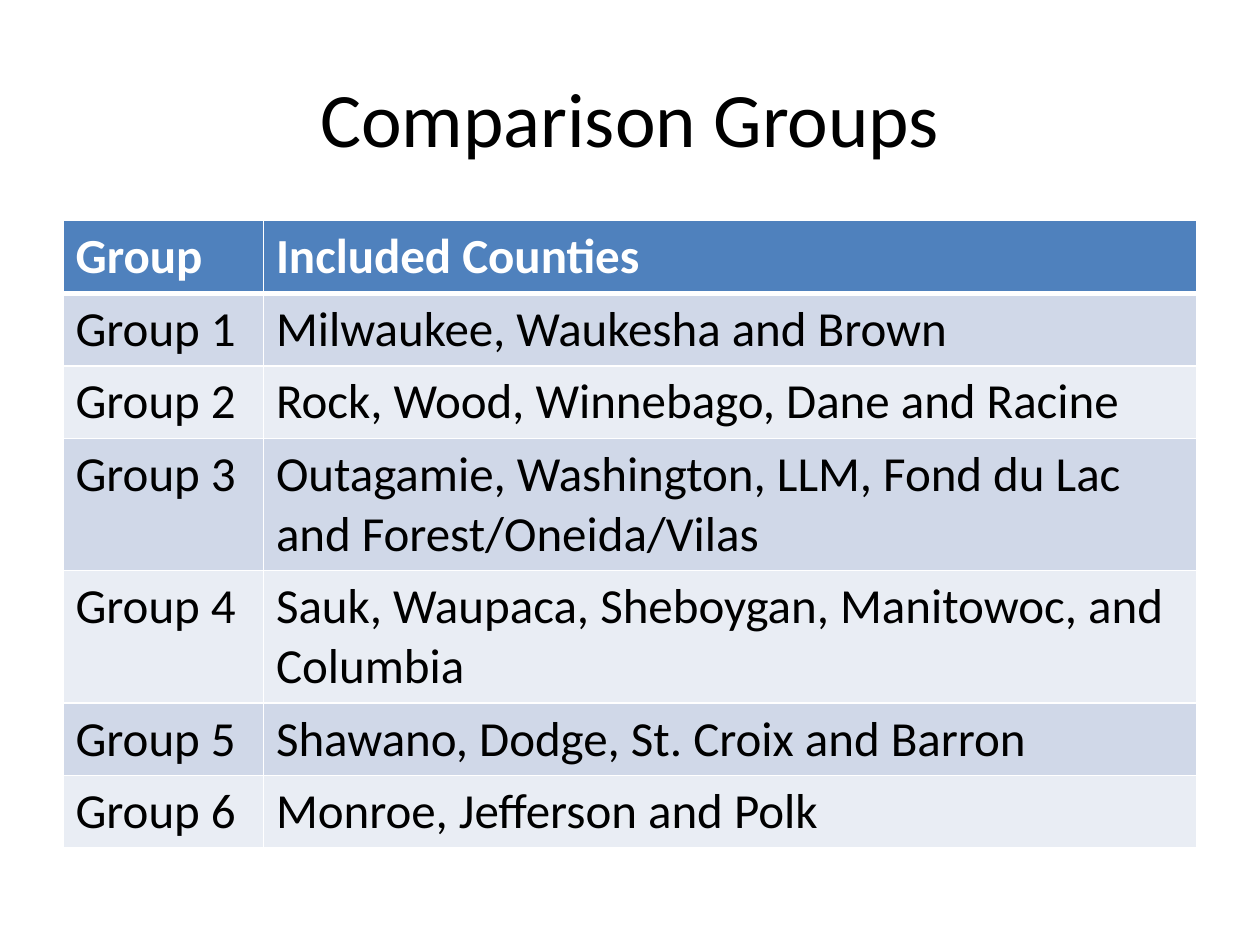
import pptx
import pptx.dml.color
import pptx.enum.text
import pptx.oxml.ns
import pptx.util
from lxml import etree

RGBColor = pptx.dml.color.RGBColor
Cm = pptx.util.Cm
Pt = pptx.util.Pt
qn = pptx.oxml.ns.qn

BLACK = RGBColor(0x00, 0x00, 0x00)
WHITE = RGBColor(0xFF, 0xFF, 0xFF)
HEADER_BLUE = RGBColor(0x4F, 0x81, 0xBD)
BAND_DARK = RGBColor(0xD0, 0xD8, 0xE8)
BAND_LIGHT = RGBColor(0xE9, 0xED, 0xF4)

HEADINGS = ("Group", "Included Counties")
COUNTIES = (
    "Milwaukee, Waukesha and Brown",
    "Rock, Wood, Winnebago, Dane and Racine",
    "Outagamie, Washington, LLM, Fond du Lac and Forest/Oneida/Vilas",
    "Sauk, Waupaca, Sheboygan, Manitowoc, and Columbia",
    "Shawano, Dodge, St. Croix and Barron",
    "Monroe, Jefferson and Polk",
)


class GroupSlide:
    font_name = "Calibri"
    margin = Cm(1.27)
    content_width = Cm(22.86)

    def __init__(self, presentation):
        self.slide = presentation.slides.add_slide(presentation.slide_layouts[5])

    def format_text(self, paragraph, size, color, bold=False):
        font = paragraph.runs[0].font
        values = {"name": self.font_name, "size": Pt(size), "bold": bold}
        for attribute, value in values.items():
            setattr(font, attribute, value)
        font.color.rgb = color

    def add_title(self, text):
        title = self.slide.shapes.title
        place = {"left": self.margin, "top": Cm(0.76),
                 "width": self.content_width, "height": Cm(3.18)}
        for attribute, value in place.items():
            setattr(title, attribute, value)
        title.text_frame.text = text
        title.text_frame.vertical_anchor = pptx.enum.text.MSO_ANCHOR.MIDDLE
        heading = title.text_frame.paragraphs[0]
        heading.alignment = pptx.enum.text.PP_ALIGN.CENTER
        self.format_text(heading, 44, BLACK)

    def add_border(self, cell, side, width):
        """Draw a white line on one side: L, R, T or B."""
        line = etree.SubElement(cell._tc.get_or_add_tcPr(), qn(f"a:ln{side}"),
                                w=str(Pt(width)))
        fill = etree.SubElement(line, qn("a:solidFill"))
        etree.SubElement(fill, qn("a:srgbClr"), val=str(WHITE))

    def add_table(self, rows, column_widths, row_height):
        table = self.slide.shapes.add_table(
            len(rows), len(column_widths), self.margin, Cm(4.45),
            self.content_width, row_height * len(rows)).table
        for column, width in zip(table.columns, column_widths):
            column.width = width
        for row_index, texts in enumerate(rows):
            table.rows[row_index].height = row_height
            is_header = row_index == 0
            band = BAND_DARK if row_index % 2 else BAND_LIGHT
            widths = {"L": 1, "R": 1, "T": 3 if row_index == 1 else 1,
                      "B": 3 if is_header else 1}
            for column_index, text in enumerate(texts):
                cell = table.cell(row_index, column_index)
                for side, width in widths.items():
                    self.add_border(cell, side, width)
                cell.fill.solid()
                cell.fill.fore_color.rgb = HEADER_BLUE if is_header else band
                cell.text = text
                self.format_text(cell.text_frame.paragraphs[0], 28,
                                 WHITE if is_header else BLACK, is_header)


def main():
    presentation = pptx.Presentation()
    presentation.slide_width = Cm(25.4)
    presentation.slide_height = Cm(19.05)
    groups = GroupSlide(presentation)
    groups.add_title("Comparison Groups")
    rows = [HEADINGS] + [(f"Group {number}", counties)
                         for number, counties in enumerate(COUNTIES, 1)]
    groups.add_table(rows, (Cm(4.04), Cm(18.82)), Cm(1.04))
    presentation.save("out.pptx")


if __name__ == "__main__":
    main()
